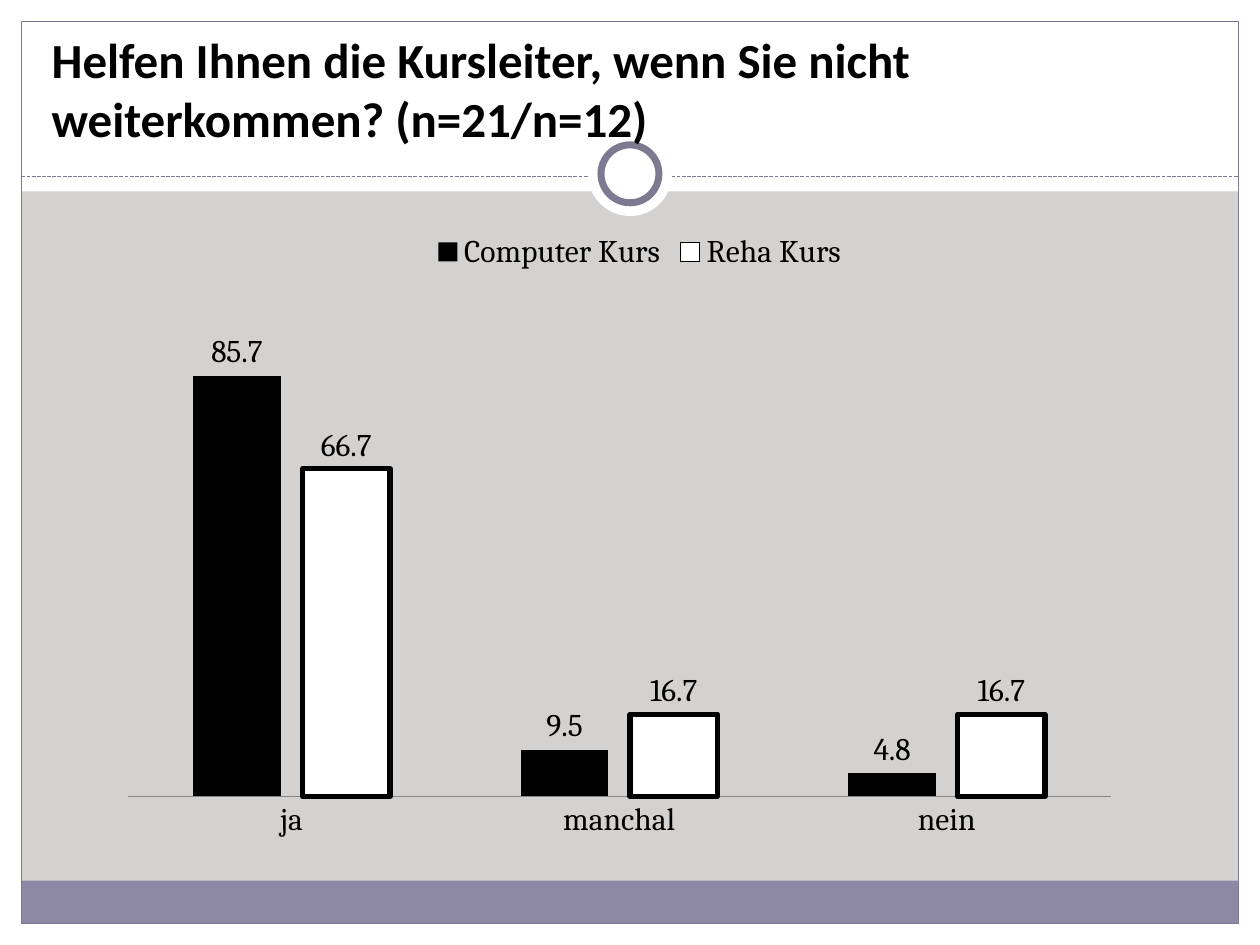
import pptx
import pptx.chart.data
import pptx.dml.color
import pptx.enum.chart
import pptx.enum.dml
import pptx.enum.shapes
import pptx.enum.text
import pptx.oxml
import pptx.oxml.ns
import pptx.util

RGBColor = pptx.dml.color.RGBColor
BACKGROUND = RGBColor(0xD4, 0xD2, 0xD0)
WHITE = RGBColor(0xFF, 0xFF, 0xFF)
BLACK = RGBColor(0, 0, 0)
BAND = RGBColor(0x8D, 0x89, 0xA4)
FRAME = RGBColor(0x7C, 0x79, 0x91)
AXIS = RGBColor(0x86, 0x86, 0x86)

WIDTH, HEIGHT = 10, 7.5
MARGIN = 0.17
HEADER_HEIGHT = 1.52
BAND_HEIGHT = 0.34
RULE_TOP = 1.4
RING_CENTER = 1.38
SHAPES = pptx.enum.shapes.MSO_SHAPE


def inches(*lengths):
    return [pptx.util.Inches(length) for length in lengths]


def add_shape(slide, kind, box, fill=None, line=None, line_width=0.75):
    shape = slide.shapes.add_shape(kind, *inches(*box))
    shape.shadow.inherit = False
    if fill is None:
        shape.fill.background()
    else:
        shape.fill.solid()
        shape.fill.fore_color.rgb = fill
    if line is None:
        shape.line.fill.background()
    else:
        shape.line.color.rgb = line
        shape.line.width = pptx.util.Pt(line_width)


def add_circle(slide, diameter, **style):
    """Add a circle centred on the dashed rule."""
    box = ((WIDTH - diameter) / 2, RING_CENTER - diameter / 2, diameter, diameter)
    add_shape(slide, SHAPES.OVAL, box, WHITE, **style)


def add_dashed_rule(slide):
    rule = slide.shapes.add_connector(
        pptx.enum.shapes.MSO_CONNECTOR.STRAIGHT,
        *inches(MARGIN, RULE_TOP, WIDTH - MARGIN, RULE_TOP))
    rule.line.color.rgb = FRAME
    rule.line.width = pptx.util.Pt(0.75)
    rule.line.dash_style = pptx.enum.dml.MSO_LINE.SQUARE_DOT
    properties = rule.element.find(pptx.oxml.ns.qn("p:spPr"))
    properties.append(pptx.oxml.parse_xml(
        f"<a:effectLst {pptx.oxml.ns.nsdecls('a')}/>"))


def add_frame(slide):
    inner_width = WIDTH - 2 * MARGIN
    bottom = HEIGHT - MARGIN
    for box in ((0, bottom, WIDTH, MARGIN), (0, 0, WIDTH, HEADER_HEIGHT),
                (0, 0, MARGIN, HEIGHT), (WIDTH - MARGIN, 0, MARGIN, HEIGHT)):
        add_shape(slide, SHAPES.RECTANGLE, box, WHITE)
    add_shape(slide, SHAPES.RECTANGLE,
              (MARGIN, bottom - BAND_HEIGHT, inner_width, BAND_HEIGHT), BAND)
    add_shape(slide, SHAPES.RECTANGLE,
              (MARGIN, MARGIN, inner_width, HEIGHT - 2 * MARGIN), line=FRAME)
    add_dashed_rule(slide)
    add_circle(slide, 0.67)
    add_circle(slide, 0.46, line=FRAME, line_width=4)


def set_title(slide, text):
    """Fill the title placeholder and bring it in front of the frame."""
    title = slide.shapes.title
    title.left, title.top, title.width, title.height = inches(0.31, 0.39, 9.33, 0.83)
    frame = title.text_frame
    frame.text = text
    frame.word_wrap = True
    frame.auto_size = pptx.enum.text.MSO_AUTO_SIZE.NONE
    frame.vertical_anchor = pptx.enum.text.MSO_ANCHOR.BOTTOM
    paragraph = frame.paragraphs[0]
    paragraph.alignment = pptx.enum.text.PP_ALIGN.LEFT
    paragraph.font.name = "Calibri"
    paragraph.font.size = pptx.util.Pt(28)
    paragraph.font.bold = True
    paragraph.font.color.rgb = BLACK
    title.element.getparent().append(title.element)


def set_plot_layout(chart, x, y, width, height):
    """Place the inner plot area, in shares of the chart's size."""
    plot_area = chart.element.find(".//" + pptx.oxml.ns.qn("c:plotArea"))
    for layout in plot_area.findall(pptx.oxml.ns.qn("c:layout")):
        plot_area.remove(layout)
    plot_area.insert(0, pptx.oxml.parse_xml(
        f"<c:layout {pptx.oxml.ns.nsdecls('c')}><c:manualLayout>"
        '<c:layoutTarget val="inner"/><c:xMode val="edge"/><c:yMode val="edge"/>'
        f'<c:x val="{x}"/><c:y val="{y}"/><c:w val="{width}"/><c:h val="{height}"/>'
        "</c:manualLayout></c:layout>"))


def style_axes(chart):
    categories, values = chart.category_axis, chart.value_axis
    categories.major_tick_mark = pptx.enum.chart.XL_TICK_MARK.NONE
    categories.format.line.color.rgb = AXIS
    categories.format.line.width = pptx.util.Pt(0.75)
    values.minimum_scale, values.maximum_scale = 0, 90
    values.has_major_gridlines = False
    values.visible = False


def add_answer_chart(slide, categories, answers):
    data = pptx.chart.data.CategoryChartData(number_format="0.0")
    data.categories = categories
    for name, values in answers.items():
        data.add_series(name, values)
    chart = slide.shapes.add_chart(
        pptx.enum.chart.XL_CHART_TYPE.COLUMN_CLUSTERED,
        *inches(1.01, 1.73, 8.13, 5.16), data).chart
    chart.has_title = False
    chart.font.name = "Cambria"
    chart.font.size = pptx.util.Pt(18)
    chart.font.color.rgb = BLACK
    chart.has_legend = True
    chart.legend.position = pptx.enum.chart.XL_LEGEND_POSITION.TOP
    chart.legend.include_in_layout = False
    style_axes(chart)
    set_plot_layout(chart, 0, 0.21, 0.96, 0.68)

    plot = chart.plots[0]
    plot.vary_by_categories = False
    plot.gap_width, plot.overlap = 150, -25
    plot.has_data_labels = True
    plot.data_labels.show_value = True
    plot.data_labels.position = pptx.enum.chart.XL_LABEL_POSITION.OUTSIDE_END
    for series, color in zip(plot.series, (BLACK, WHITE)):
        series.invert_if_negative = False
        series.format.fill.solid()
        series.format.fill.fore_color.rgb = color
    outlined = plot.series[1].format.line
    outlined.color.rgb = BLACK
    outlined.width = pptx.util.Pt(3)


def main():
    presentation = pptx.Presentation()
    presentation.slide_width, presentation.slide_height = inches(WIDTH, HEIGHT)
    slide = presentation.slides.add_slide(presentation.slide_layouts[5])
    slide.background.fill.solid()
    slide.background.fill.fore_color.rgb = BACKGROUND
    add_frame(slide)
    set_title(slide, "Helfen Ihnen die Kursleiter, wenn Sie nicht "
                     "weiterkommen? (n=21/n=12)")
    add_answer_chart(slide, ["ja", "manchal", "nein"], {
        "Computer Kurs": (85.7, 9.5, 4.8),
        "Reha Kurs": (66.7, 16.7, 16.7),
    })
    presentation.save("out.pptx")


if __name__ == "__main__":
    main()
